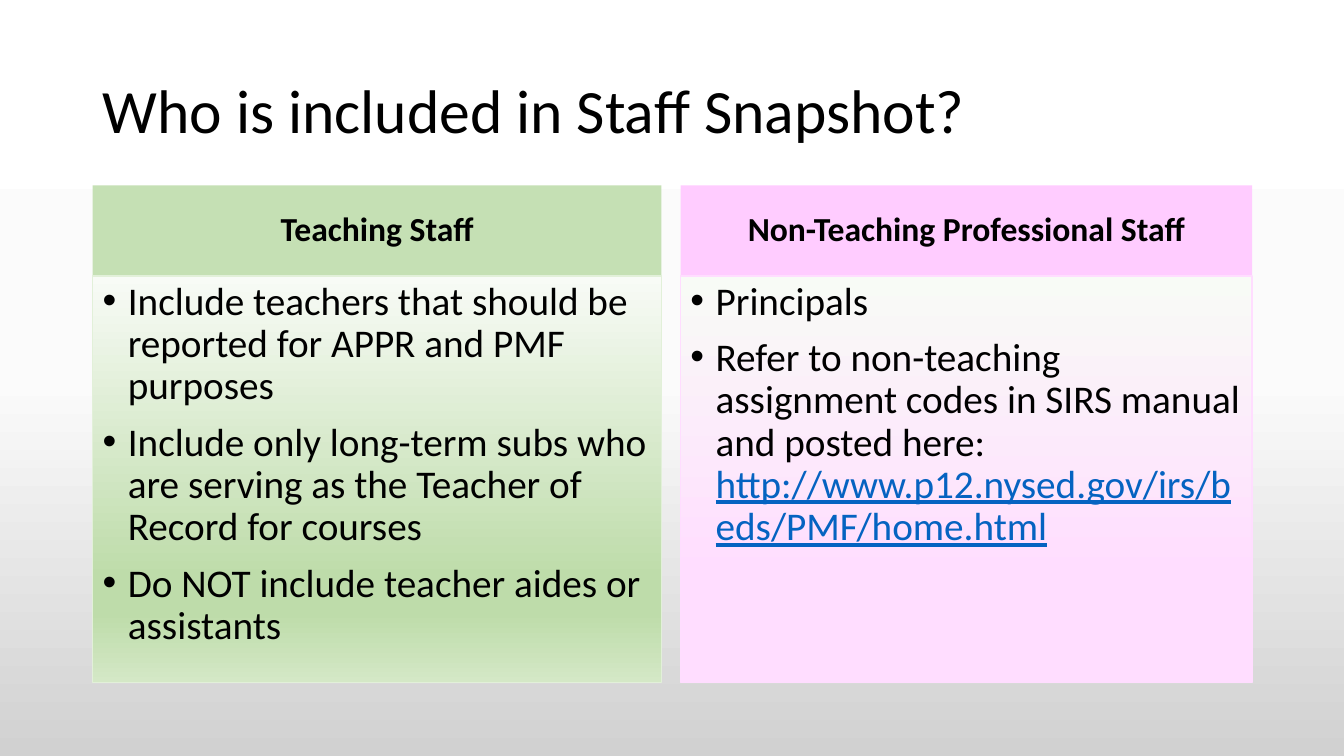
from lxml.etree import SubElement
from pptx import Presentation
from pptx.dml.color import RGBColor
from pptx.enum.shapes import MSO_SHAPE
from pptx.enum.text import MSO_ANCHOR, PP_ALIGN
from pptx.oxml.ns import qn
from pptx.util import Inches, Pt

COLORS = {
    "text": "000000", "link": "0563C1",
    "white": "FFFFFF", "off_white": "FBFBFB", "gray": "D1D1D1",
    "green": "C5E0B4", "green_line": "E2F0D9",
    "green_mid": "BEDCAA", "green_end": "D4E8C6",
    "pink": "FFCCFF", "pink_pale": "FFDDFF", "pale": "F8FBF6",
}


def fill_downward(fill, owner, stops):
    """Fill with a top-to-bottom gradient of (percent, color name) stops."""
    fill.gradient()
    fill.gradient_angle = 270
    stop_list = next(owner.iter(qn("a:gsLst")))
    for old_stop in list(stop_list):
        stop_list.remove(old_stop)
    for percent, color in stops:
        stop = SubElement(stop_list, qn("a:gs"), pos=str(percent * 1000))
        SubElement(stop, qn("a:srgbClr"), val=COLORS[color])


def add_run(paragraph, text, size, color="text", bold=False, underline=False):
    paragraph.line_spacing = 0.9
    run = paragraph.add_run()
    run.text = text
    run.font.name = "Calibri"
    run.font.size = Pt(size)
    run.font.bold = bold
    run.font.underline = underline
    run.font.color.rgb = RGBColor.from_string(COLORS[color])


prs = Presentation()
prs.slide_width, prs.slide_height = Inches(13.33), Inches(7.5)
slide = prs.slides.add_slide(prs.slide_layouts[6])

# Background
fill_downward(slide.background.fill, slide.element,
              [(0, "white"), (50, "off_white"), (100, "gray")])

# Title
title = slide.shapes.add_textbox(Inches(0.92), Inches(0.4), Inches(11.5), Inches(1.45))
title.text_frame.word_wrap = True
title.text_frame.vertical_anchor = MSO_ANCHOR.MIDDLE
add_run(title.text_frame.paragraphs[0], "Who is included in Staff Snapshot?", 44)

# Staff groups: each bullet is a list of (text, color, underline)
staff_groups = [
    {
        "heading": "Teaching Staff", "left": 0.92, "width": 5.64,
        "fill": "green", "line": "green_line",
        "stops": [(0, "pale"), (74, "green_mid"), (83, "green_mid"), (100, "green_end")],
        "bullets": [
            [("Include teachers that should be reported for APPR and PMF purposes", "text", False)],
            [("Include only long-term subs who are serving as the Teacher of Record for courses",
              "text", False)],
            [("Do NOT include teacher aides or assistants", "text", False)],
        ],
    },
    {
        "heading": "Non-Teaching Professional Staff", "left": 6.75, "width": 5.67,
        "fill": "pink", "line": "pink_pale",
        "stops": [(0, "pale"), (74, "pink_pale"), (100, "pink_pale")],
        "bullets": [
            [("Principals", "text", False)],
            [("Refer to non-teaching assignment codes in SIRS manual and posted here: ",
              "text", False),
             ("http://www.p12.nysed.gov/irs/beds/PMF/home.html", "link", True)],
        ],
    },
]

for group in staff_groups:
    left, width = Inches(group["left"]), Inches(group["width"])

    # Heading band
    heading = slide.shapes.add_shape(MSO_SHAPE.RECTANGLE, left, Inches(1.84), width, Inches(0.9))
    heading.shadow.inherit = False
    heading.fill.solid()
    heading.fill.fore_color.rgb = RGBColor.from_string(COLORS[group["fill"]])
    heading.line.fill.background()
    heading.text_frame.word_wrap = True
    heading.text_frame.vertical_anchor = MSO_ANCHOR.MIDDLE
    heading_line = heading.text_frame.paragraphs[0]
    heading_line.alignment = PP_ALIGN.CENTER
    add_run(heading_line, group["heading"], 24, bold=True)

    # Bulleted panel
    panel = slide.shapes.add_shape(MSO_SHAPE.RECTANGLE, left, Inches(2.74), width, Inches(4.03))
    panel.shadow.inherit = False
    fill_downward(panel.fill, panel.element, group["stops"])
    panel.line.color.rgb = RGBColor.from_string(COLORS[group["line"]])
    panel.line.width = Pt(1)
    frame = panel.text_frame
    frame.word_wrap = True
    frame.vertical_anchor = MSO_ANCHOR.TOP
    for index, bullet in enumerate(group["bullets"]):
        paragraph = frame.add_paragraph() if index else frame.paragraphs[0]
        paragraph.alignment = PP_ALIGN.LEFT
        paragraph.space_before = Pt(10)
        for text, color, underline in bullet:
            add_run(paragraph, text, 28, color, underline=underline)
        properties = paragraph._p.get_or_add_pPr()
        properties.set("marL", str(Inches(0.25)))
        properties.set("indent", str(-Inches(0.25)))
        SubElement(properties, qn("a:buFont"), typeface="Arial")
        SubElement(properties, qn("a:buChar"), char="•")

prs.save("out.pptx")
